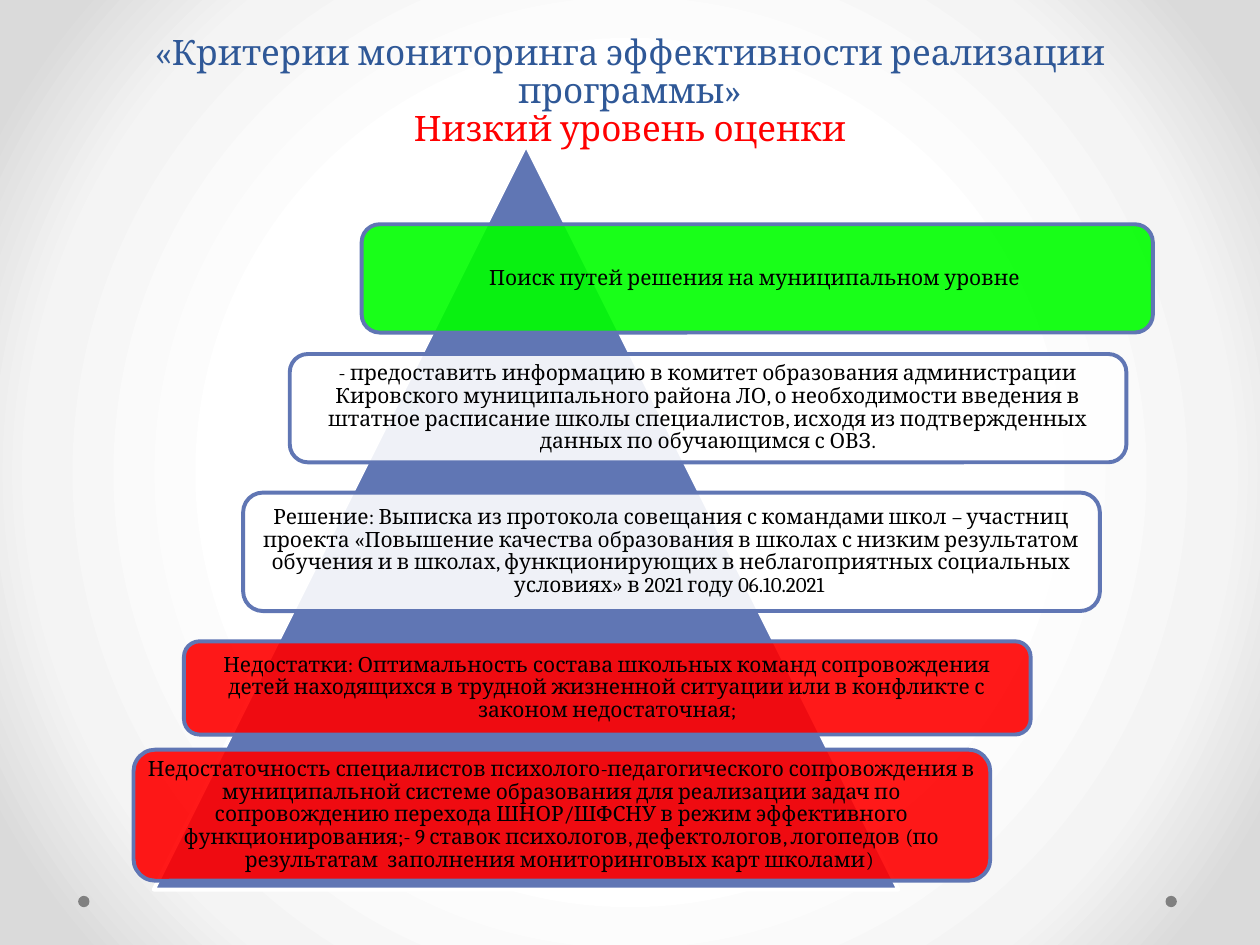
from dataclasses import dataclass

from lxml.etree import SubElement
from pptx import Presentation
from pptx.dml.color import RGBColor as Color
from pptx.enum.shapes import MSO_SHAPE as Shape
from pptx.enum.text import MSO_ANCHOR as Anchor, MSO_AUTO_SIZE as AutoSize, PP_ALIGN as Align
from pptx.oxml.ns import qn
from pptx.util import Inches, Pt

COLUMNS, ROWS = 100, 75
SLIDE_WIDTH, SLIDE_HEIGHT = Inches(10), Inches(7.5)


@dataclass(frozen=True)
class Theme:
    font: str = "Cambria"
    title_size: int = 20
    body_size: int = 12
    line_width: float = 2.25
    line_spacing: float = 0.9
    inset: float = 0.05
    opacity: int = 90
    title: str = "2F5897"
    accent: str = "6076B4"
    red: str = "FF0000"
    green: str = "00FF00"
    white: str = "FFFFFF"
    black: str = "000000"
    dot: str = "808080"
    background: tuple = ((50, "FFFFFF"), (76, "F4F4F4"), (92, "DADADA"))


THEME = Theme()

# Grid box and colour of each step, from the base up to the top
STEPS = (
    ((10.6, 59.5, 68, 10.4), THEME.red,
     "Недостаточность специалистов психолого-педагогического сопровождения в муниципальной "
     "системе образования для реализации задач по сопровождению перехода ШНОР/ШФСНУ в режим "
     "эффективного функционирования;- 9 ставок психологов, дефектологов, логопедов (по "
     "результатам  заполнения мониторинговых карт школами) "),
    ((14.6, 50.9, 67.2, 7.4), THEME.red,
     "Недостатки: Оптимальность состава школьных команд сопровождения детей находящихся в "
     "трудной жизненной ситуации или в конфликте с законом недостаточная;"),
    ((19.3, 39.1, 68, 9.4), THEME.white,
     "Решение: Выписка из протокола совещания с командами школ – участниц проекта «Повышение "
     "качества образования в школах с низким результатом обучения и в школах, функционирующих "
     "в неблагоприятных социальных условиях» в 2021 году 06.10.2021 "),
    ((23, 28.1, 66.4, 8.6), THEME.white,
     "- предоставить информацию в комитет образования администрации Кировского муниципального "
     "района ЛО, о необходимости введения в штатное расписание школы специалистов, исходя из "
     "подтвержденных данных по обучающимся с ОВЗ."),
    ((28.7, 17.8, 62.8, 8.6), THEME.green,
     "Поиск путей решения на муниципальном уровне "),
)


def place(box):
    """Turn a grid box (column, row, columns, rows) into slide lengths."""
    column, row, columns, rows = box
    return (int(SLIDE_WIDTH * column / COLUMNS), int(SLIDE_HEIGHT * row / ROWS),
            int(SLIDE_WIDTH * columns / COLUMNS), int(SLIDE_HEIGHT * rows / ROWS))


def add_filled(shapes, kind, box, fill, line=None):
    shape = shapes.add_shape(kind, *place(box))
    shape.shadow.inherit = False
    shape.fill.solid()
    shape.fill.fore_color.rgb = Color.from_string(fill)
    if line:
        shape.line.color.rgb = Color.from_string(line)
        shape.line.width = Pt(THEME.line_width)
    else:
        shape.line.fill.background()
    return shape


def format_paragraph(paragraph, size, color):
    paragraph.alignment = Align.CENTER
    paragraph.line_spacing = THEME.line_spacing
    paragraph.font.name = THEME.font
    paragraph.font.size = Pt(size)
    paragraph.font.color.rgb = Color.from_string(color)


def paint_background(slide):
    """Radial gradient spreading from the middle of the slide."""
    fill = slide.background.fill
    fill.gradient()
    gradient = slide.background._cSld.find(".//" + qn("a:gradFill"))
    for child in list(gradient):
        gradient.remove(child)
    stops = SubElement(gradient, qn("a:gsLst"))
    for position, color in THEME.background:
        stop = SubElement(stops, qn("a:gs"), pos=str(position * 1000))
        SubElement(stop, qn("a:srgbClr"), val=color)
    circle = SubElement(gradient, qn("a:path"), {"path": "circle"})
    SubElement(circle, qn("a:fillToRect"), dict.fromkeys("ltrb", "50000"))


def add_corner_dots(slide, box):
    column, row, columns, size = box
    for left in (column, column + columns - size):
        add_filled(slide.shapes, Shape.OVAL, (left, row, size, size), THEME.dot)


def add_title(slide, box):
    title = slide.shapes.title
    title.left, title.top, title.width, title.height = place(box)
    frame = title.text_frame
    frame.auto_size = AutoSize.NONE
    frame.vertical_anchor = Anchor.BOTTOM
    paragraph = frame.paragraphs[0]
    format_paragraph(paragraph, THEME.title_size, THEME.title)
    paragraph.add_run().text = "«Критерии мониторинга эффективности реализации программы»"
    paragraph.add_line_break()
    level = paragraph.add_run()
    level.text = "Низкий уровень оценки"
    level.font.color.rgb = Color.from_string(THEME.red)


def add_step(shapes, box, fill, text):
    step = add_filled(shapes, Shape.ROUNDED_RECTANGLE, box, fill, THEME.accent)
    color = step.fill._xPr.find(".//" + qn("a:srgbClr"))
    SubElement(color, qn("a:alpha"), val=str(THEME.opacity * 1000))
    frame = step.text_frame
    frame.word_wrap = True
    frame.vertical_anchor = Anchor.MIDDLE
    frame.margin_left = frame.margin_right = Inches(THEME.inset)
    frame.margin_top = frame.margin_bottom = Inches(THEME.inset)
    frame.text = text
    format_paragraph(frame.paragraphs[0], THEME.body_size, THEME.black)


def add_pyramid(slide, box):
    group = slide.shapes.add_group_shape()
    add_filled(group.shapes, Shape.ISOSCELES_TRIANGLE, box, THEME.accent, THEME.white)
    for step_box, fill, text in STEPS:
        add_step(group.shapes, step_box, fill, text)


def main():
    presentation = Presentation()
    presentation.slide_width, presentation.slide_height = SLIDE_WIDTH, SLIDE_HEIGHT
    slide = presentation.slides.add_slide(presentation.slide_layouts[5])
    paint_background(slide)
    add_corner_dots(slide, (6.2, 71.1, 87.2, 0.9))
    add_title(slide, (5, 3.6, 90, 8.7))
    add_pyramid(slide, (12.2, 11.5, 59.1, 59.1))
    presentation.save("out.pptx")


if __name__ == "__main__":
    main()
